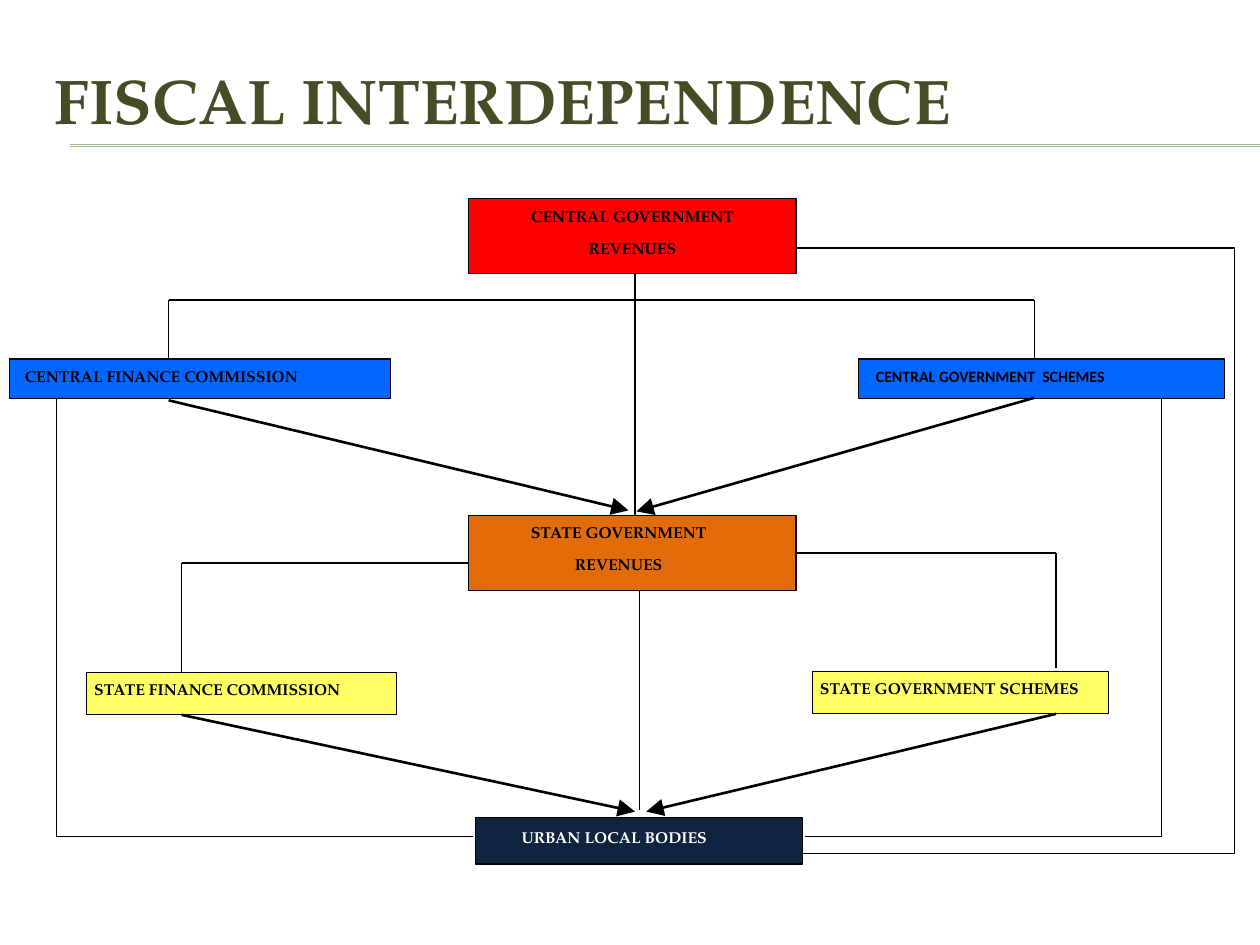
from itertools import pairwise
from lxml import etree
from pptx import Presentation
from pptx import util as u
from pptx.dml.color import RGBColor
from pptx.enum import shapes, text
from pptx.oxml.ns import qn

SERIF = "TeX Gyre Pagella"
MID, LEFT = text.PP_ALIGN.CENTER, text.PP_ALIGN.LEFT

# Nodes: box in cm, fill, lines, alignment, left / top / right inset, format
NODES = [
    ((9.25, 0, 6.6, 1.5), "FF0000", ["CENTRAL GOVERNMENT", "REVENUES"],
     MID, (0, 0.15, 0), {}),
    ((0, 3.23, 7.67, 0.79), "0066FF", ["CENTRAL FINANCE COMMISSION"],
     LEFT, (0.3, 0.15, 0), {}),
    ((17.1, 3.23, 7.39, 0.79), "0066FF", ["CENTRAL GOVERNMENT  SCHEMES"],
     LEFT, (0.36, 0.15, 0), {"name": "Calibri"}),
    ((9.25, 6.38, 6.6, 1.52), "E36C0A", ["STATE GOVERNMENT", "REVENUES"],
     MID, (0, 0.15, 0.56), {}),
    ((1.55, 9.55, 6.25, 0.84), "FFFF66", ["STATE FINANCE COMMISSION"],
     LEFT, (0.15, 0.15, 0), {}),
    ((16.18, 9.53, 5.97, 0.84), "FFFF66", ["STATE GOVERNMENT SCHEMES"],
     LEFT, (0.15, 0.15, 0), {}),
    ((9.38, 12.47, 6.6, 0.94), "0F243E", ["URBAN LOCAL BODIES"],
     MID, (0, 0.2, 1), {"color": "FFFFFF"}),
]

# Plain routes, each a chain of straight lines
ROUTES = [
    [(12.6, 1.5), (12.6, 6.38)],
    [(3.2, 3.23), (3.2, 2.04), (20.65, 2.04), (20.65, 3.23)],
    [(9.25, 7.34), (3.46, 7.34), (3.46, 9.55)],
    [(15.85, 7.14), (21.09, 7.14), (21.09, 9.45)],
    [(12.7, 7.9), (12.7, 12.32)],
    [(0.94, 4.04), (0.94, 12.86), (9.33, 12.86)],
    [(23.22, 4.04), (23.22, 12.86), (16.03, 12.86)],
]

ARROWS = [
    [(3.2, 4.06), (12.47, 6.28)],
    [(20.65, 4.01), (12.63, 6.3)],
    [(3.46, 10.4), (12.6, 12.35)],
    [(21.09, 10.38), (12.83, 12.35)],
]


def paint(part, hue):
    """Set a font, fill or line to a hex colour."""
    if hasattr(part, "solid"):
        part.solid()
        part.fore_color.rgb = RGBColor.from_string(hue)
    else:
        part.color.rgb = RGBColor.from_string(hue)


def style(run, **form):
    hue = form.pop("color")
    for key, val in form.items():
        setattr(run.font, key, val)
    paint(run.font, hue)


def wire(slide, start, end, hue="000000", width=0.7,
         kind=shapes.MSO_CONNECTOR.STRAIGHT):
    ends = [u.Cm(val) for val in (*start, *end)]
    line = slide.shapes.add_connector(kind, *ends)
    paint(line.line, hue)
    line.line.width = u.Pt(width)
    etree.SubElement(line._element.spPr, qn("a:effectLst"))
    return line


def title(slide, box, words):
    x, y, w, h = box
    # Double rule under the title
    for drop in (2.08, 2.11):
        wire(slide, (x + 0.58, y + drop), (25.4, y + drop), "A5B592", 0.75)
    frame = slide.shapes.add_textbox(*map(u.Cm, box)).text_frame
    frame.word_wrap = True
    frame.vertical_anchor = text.MSO_ANCHOR.MIDDLE
    run = frame.paragraphs[0].add_run()
    run.text = words
    style(run, name=SERIF, size=u.Pt(36), bold=True, color="444D26")


def node(slide, box, fill, lines, align, pads, form):
    rect = slide.shapes.add_shape(shapes.MSO_SHAPE.RECTANGLE, *map(u.Cm, box))
    rect.shadow.inherit = False
    paint(rect.fill, fill)
    paint(rect.line, "000000")
    rect.line.width = u.Pt(0.7)
    frame = rect.text_frame
    left, top, right = map(u.Cm, pads)
    look = {"margin_left": left, "margin_top": top, "margin_right": right,
            "margin_bottom": 0, "word_wrap": True,
            "vertical_anchor": text.MSO_ANCHOR.TOP}
    for key, val in look.items():
        setattr(frame, key, val)
    frame.text = "\n".join(lines)
    base = {"name": SERIF, "size": u.Pt(9), "bold": True, "color": "000000"}
    for para in frame.paragraphs:
        para.alignment = align
        para.space_after = u.Pt(7.5)
        style(para.runs[0], **(base | form))


def flow(slide, left, top):
    def at(spot):
        return left + spot[0], top + spot[1]

    # Boxes
    for (x, y, w, h), *rest in NODES:
        node(slide, (*at((x, y)), w, h), *rest)

    # Plain lines
    for route in ROUTES:
        for start, end in pairwise(route):
            wire(slide, at(start), at(end))

    # Arrows
    for start, end in ARROWS:
        line = wire(slide, at(start), at(end), width=1.5)
        etree.SubElement(line.line._get_or_add_ln(), qn("a:tailEnd"),
                         type="triangle", w="lg", len="lg")

    # Outer loop from central revenues to local bodies
    start, end, reach = (15.85, 0.99), (15.98, 13.19), 24.69
    loop = wire(slide, at(start), at(end), width=0.75,
                kind=shapes.MSO_CONNECTOR.ELBOW)
    ratio = (reach - start[0]) / (end[0] - start[0])
    geom = loop._element.spPr.find(qn("a:prstGeom"))
    etree.SubElement(geom.find(qn("a:avLst")), qn("a:gd"), name="adj1",
                     fmla=f"val {round(ratio * 100000)}")


def main():
    deck = Presentation()
    deck.slide_width, deck.slide_height = u.Cm(25.4), u.Cm(19.05)
    slide = deck.slides.add_slide(deck.slide_layouts[6])
    title(slide, (0.84, 0.84, 24.13, 2.34), "FISCAL INTERDEPENDENCE")
    flow(slide, 0.2, 4.01)
    deck.save("out.pptx")


if __name__ == "__main__":
    main()
